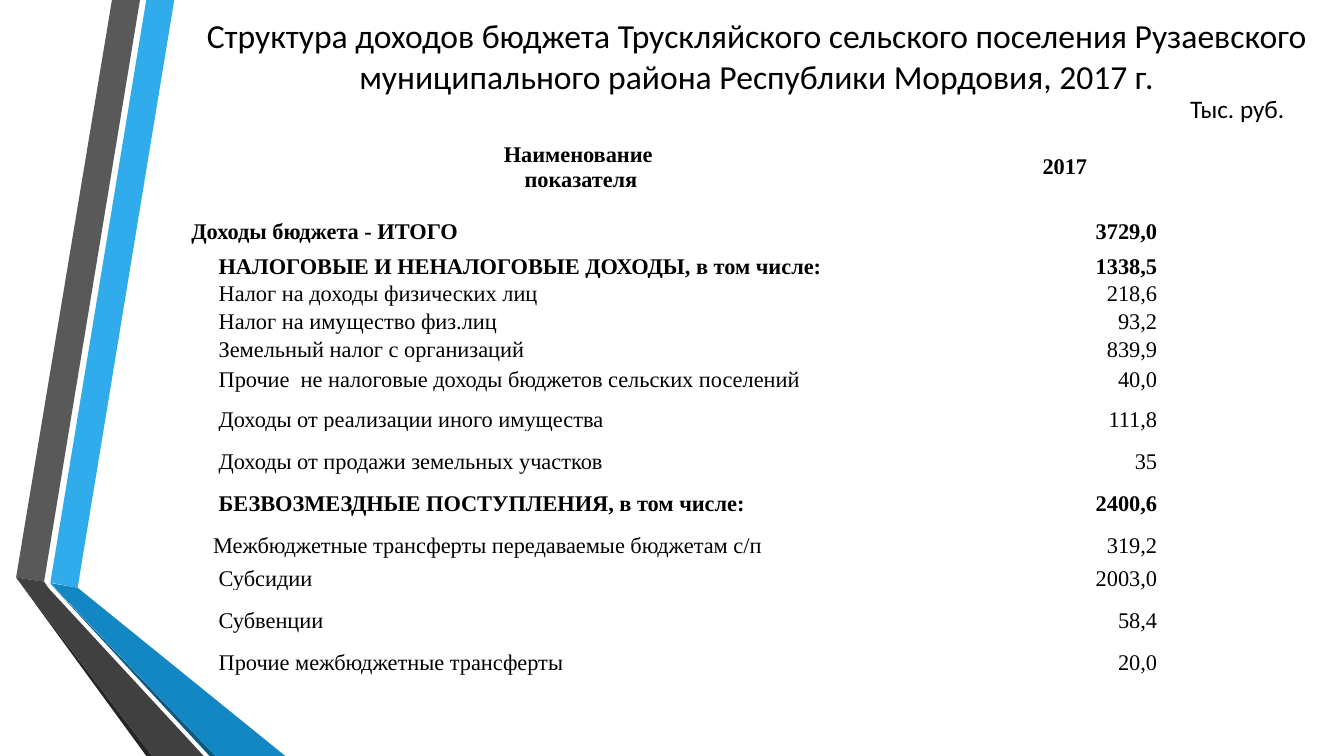
import pptx
import pptx.dml.color
import pptx.enum.text
import pptx.util
from dataclasses import dataclass

Pt = pptx.util.Pt
ALIGN = pptx.enum.text.PP_ALIGN
ANCHOR = pptx.enum.text.MSO_ANCHOR


@dataclass(frozen=True)
class Theme:
    text: str = "000000"
    blue: str = "30ACEC"
    deep_blue: str = "1287C3"
    navy: str = "0C5A82"
    gray: str = "595959"
    dark_gray: str = "404040"
    charcoal: str = "262626"
    heading_font: str = "Calibri"
    table_font: str = "Times New Roman"
    title_size: int = 24
    unit_size: int = 18
    table_size: int = 16


THEME = Theme()

# Ribbon outlines, in points from the corner of their box
RIBBONS = [
    (THEME.blue, [(24.5, 416.2), (44, 419.8), (113, 0), (93, 0)]),
    (THEME.gray, [(88.5, 0), (68.5, 0), (0, 412.5), (20, 415.5)]),
    (THEME.charcoal, [(0, 412.5), (93, 540), (97.2, 540)]),
    (THEME.navy, [(24.5, 417), (138.2, 540), (142.5, 540)]),
    (THEME.deep_blue, [(24.5, 416.5), (142.5, 540), (192.3, 540), (44, 419.8)]),
    (THEME.dark_gray, [(134, 540), (23, 420), (20, 415.5), (0, 412.5), (97.2, 540)]),
]

# Left indents of the table's first column
FLUSH, HALF, FULL = 0.7, 16.2, 20.2

# Row height, indent, bold, name, value
INCOME = [
    (30.2, FLUSH, True, "Доходы бюджета - ИТОГО", "3729,0"),
    (24.5, FULL, True, "НАЛОГОВЫЕ И НЕНАЛОГОВЫЕ ДОХОДЫ, в том числе:", "1338,5"),
    (19.5, FULL, False, "Налог на доходы физических лиц", "218,6"),
    (19.5, FULL, False, "Налог на имущество физ.лиц", "93,2"),
    (19, FULL, False, "Земельный налог с организаций", "839,9"),
    (21.6, FULL, False, "Прочие  не налоговые доходы бюджетов сельских поселений", "40,0"),
    (28, FULL, False, "Доходы от реализации иного имущества", "111,8"),
    (30.2, FULL, False, "Доходы от продажи земельных участков", "35"),
    (30.2, FULL, True, "БЕЗВОЗМЕЗДНЫЕ ПОСТУПЛЕНИЯ, в том числе:", "2400,6"),
    (30.2, HALF, False, "Межбюджетные трансферты передаваемые бюджетам с/п", "319,2"),
    (23, FULL, False, "Субсидии", "2003,0"),
    (30.2, FULL, False, "Субвенции", "58,4"),
    (30.2, FULL, False, "Прочие межбюджетные трансферты", "20,0"),
]


def rgb(color):
    return pptx.dml.color.RGBColor.from_string(color)


def style_paragraph(p, text, font, size, align, bold=False):
    p.text = text
    p.alignment = align
    p.font.name = font
    p.font.size = Pt(size)
    p.font.bold = bold
    p.font.color.rgb = rgb(THEME.text)


def add_ribbons(slide, left, top):
    for color, points in RIBBONS:
        corners = [(Pt(left + x), Pt(top + y)) for x, y in points]
        builder = slide.shapes.build_freeform(*corners[0])
        builder.add_line_segments(corners[1:], close=True)
        sp = builder.convert_to_shape()
        sp.shadow.inherit = False
        sp.fill.solid()
        sp.fill.fore_color.rgb = rgb(color)
        sp.line.fill.background()


def add_heading(slide, left, top, width, height):
    # Title
    tf = slide.shapes.add_textbox(Pt(left), Pt(top), Pt(width), Pt(height)).text_frame
    tf.word_wrap = True
    tf.vertical_anchor = ANCHOR.MIDDLE
    style_paragraph(
        tf.paragraphs[0],
        "Структура доходов бюджета Трускляйского сельского поселения Рузаевского "
        "муниципального района Республики Мордовия, 2017 г.",
        THEME.heading_font, THEME.title_size, ALIGN.CENTER)

    # Unit of measure, under the right end of the title
    unit = slide.shapes.add_textbox(
        Pt(left + width - 102), Pt(top + height - 7), Pt(84), Pt(29))
    unit.text_frame.word_wrap = False
    style_paragraph(unit.text_frame.paragraphs[0], "Тыс. руб.",
                    THEME.heading_font, THEME.unit_size, ALIGN.LEFT)


def fill_cell(cell, text, align, anchor, bold, indent=FLUSH):
    cell.fill.background()
    cell.vertical_anchor = anchor
    cell.margin_left = Pt(indent)
    cell.margin_top = cell.margin_right = Pt(0.7)
    cell.margin_bottom = 0
    style_paragraph(cell.text_frame.paragraphs[0], text,
                    THEME.table_font, THEME.table_size, align, bold)


def add_income_table(slide, left, top, width, name_width, header_height):
    height = header_height + sum(row[0] for row in INCOME)
    table = slide.shapes.add_table(
        len(INCOME) + 1, 2, Pt(left), Pt(top), Pt(width), Pt(height)).table
    table.first_row = table.horz_banding = False
    table.columns[0].width = Pt(name_width)
    table.columns[1].width = Pt(width - name_width)

    # Header
    table.rows[0].height = Pt(header_height)
    for col, text in enumerate(["Наименование \vпоказателя", "2017"]):
        fill_cell(table.cell(0, col), text, ALIGN.CENTER, ANCHOR.MIDDLE, True)

    # Income lines
    for i, (row_height, indent, bold, name, value) in enumerate(INCOME, 1):
        table.rows[i].height = Pt(row_height)
        fill_cell(table.cell(i, 0), name, ALIGN.LEFT, ANCHOR.BOTTOM, bold, indent)
        fill_cell(table.cell(i, 1), value, ALIGN.RIGHT, ANCHOR.BOTTOM, bold)


def main():
    prs = pptx.Presentation()
    prs.slide_width, prs.slide_height = Pt(960), Pt(540)
    slide = prs.slides.add_slide(prs.slide_layouts[6])
    add_ribbons(slide, 11.5, 0)
    add_heading(slide, 136, 9.5, 809, 60.5)
    add_income_table(slide, 136, 93.6, 691.2, 558, 51)
    prs.save("out.pptx")


if __name__ == "__main__":
    main()
